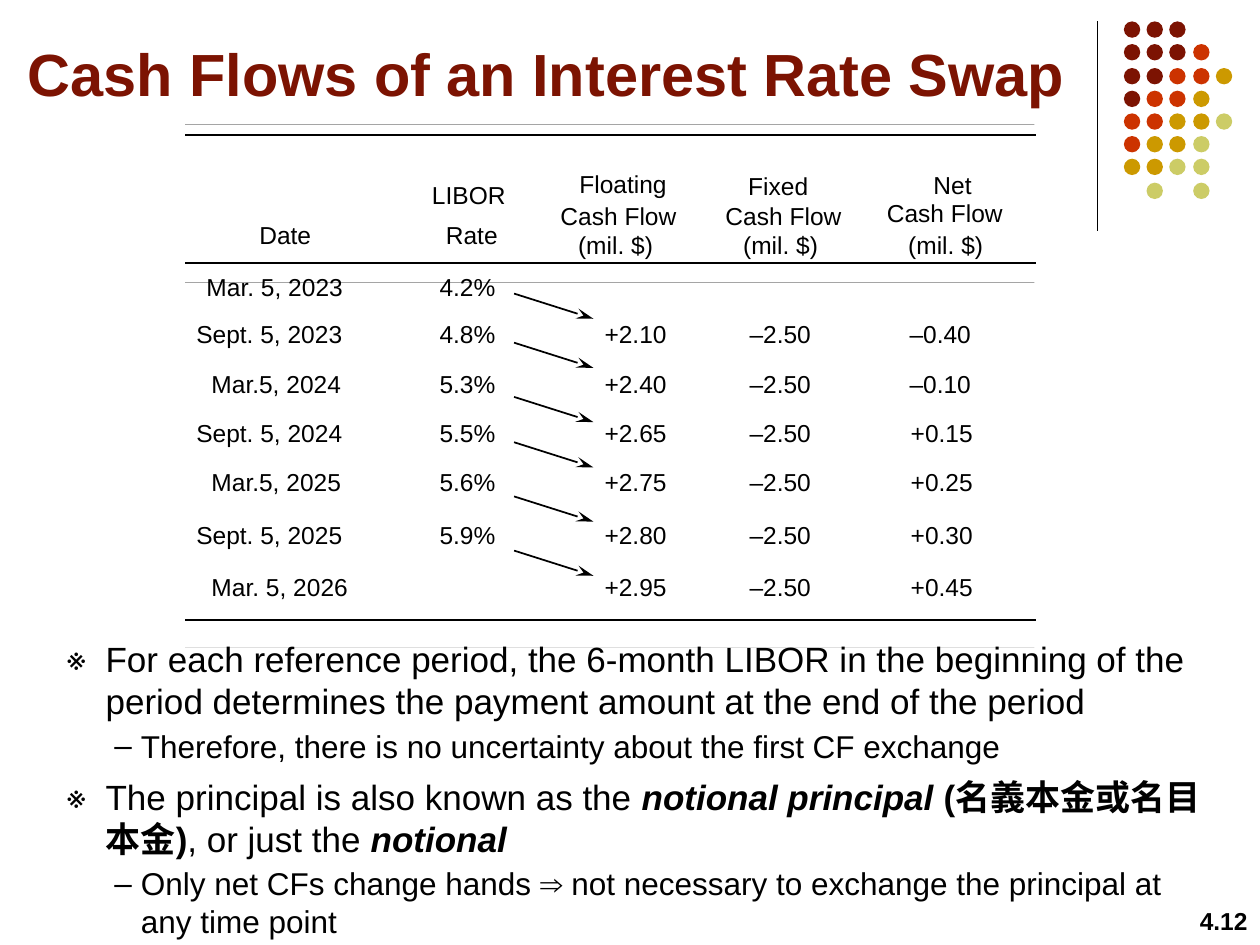
from dataclasses import dataclass

from lxml.etree import SubElement
from pptx import Presentation
from pptx.dml.color import RGBColor
from pptx.enum.shapes import MSO_CONNECTOR, MSO_SHAPE
from pptx.enum.text import MSO_ANCHOR, MSO_AUTO_SIZE, PP_ALIGN
from pptx.oxml.ns import qn
from pptx.util import Emu, Pt

SCALE = 9144  # EMU per px, at 100 px to the inch
HAIR = 600  # thickness of the hairline bars, in EMU
FONT = "Arial"
COLORS = {
    "ink": "000000",
    "D": "7C1302",
    "R": "CC3300",
    "G": "CC9900",
    "Y": "CCCC66",
}


@dataclass
class Label:
    text: str
    x: int
    y: int
    wide: int


@dataclass
class Row:
    date: Label
    rate: str = ""
    float_cf: str = ""
    net: str = ""


@dataclass
class Run:
    text: str
    bold: bool = False
    slant: bool = False


@dataclass
class Point:
    level: int
    before: int
    runs: list[Run]


@dataclass
class Style:
    size: int
    margin: int
    hang: int
    mark: str


HEADS = [
    Label("LIBOR", 333, 138, 79),
    Label("Rate", 344, 170, 62),
    Label("Date", 196, 170, 62),
    Label("Floating", 450, 129, 95),
    Label("Fixed", 584, 131, 74),
    Label("Net", 731, 130, 51),
    Label("Cash Flow", 435, 155, 113),
    Label("Cash Flow", 566, 155, 113),
    Label("Cash Flow", 694, 152, 113),
] + [Label("(mil. $)", x, 178, 80) for x in (449, 580, 711)]

ROWS = [
    Row(Label("Mar. 5, 2023", 154, 211, 129), "4.2%"),
    Row(Label("Sept. 5, 2023", 146, 248, 137), "4.8%", "+2.10", "–0.40"),
    Row(Label("Mar.5, 2024", 158, 288, 124), "5.3%", "+2.40", "–0.10"),
    Row(Label("Sept. 5, 2024", 146, 327, 137), "5.5%", "+2.65", "+0.15"),
    Row(Label("Mar.5, 2025", 158, 366, 124), "5.6%", "+2.75", "+0.25"),
    Row(Label("Sept. 5, 2025", 146, 408, 137), "5.9%", "+2.80", "+0.30"),
    Row(Label("Mar. 5, 2026", 158, 449, 129), "", "+2.95", "+0.45"),
]

STYLES = [Style(20, 31, 31, "※"), Style(18, 59, 21, "–")]
POINTS = [
    Point(0, 0, [Run("For each reference period, the 6-month LIBOR in the beginning of "
                     "the period determines the payment amount at the end of the period")]),
    Point(1, 3, [Run("Therefore, there is no uncertainty about the first CF exchange")]),
    Point(0, 6, [
        Run("The principal is also known as the "),
        Run("notional principal ", True, True),
        Run("(名義本金或名目本金)", True),
        Run(", or just the "),
        Run("notional", True, True),
    ]),
    Point(1, 3, [Run("Only net CFs change hands ⇒ not necessary to exchange the "
                     "principal at any time point")]),
]

DOTS = ["DDD", "DDDR", "DDRRG", "DRRG", "RRGGY", "RGGY", "GGYY", " Y Y"]


def px(n: int) -> Emu:
    return Emu(n * SCALE)


def tint(name: str) -> RGBColor:
    return RGBColor.from_string(COLORS[name])


def add_run(para, run: Run, size: int, color: str = "ink") -> None:
    part = para.add_run()
    part.text = run.text
    font = part.font
    font.name, font.size = FONT, Pt(size)
    font.bold, font.italic = run.bold, run.slant
    font.color.rgb = tint(color)


def add_box(slide, x: int, y: int, w: int, h: int, wrap: bool = True):
    frame = slide.shapes.add_textbox(px(x), px(y), px(w), px(h)).text_frame
    frame.word_wrap = wrap
    return frame


def add_label(slide, label: Label) -> None:
    frame = add_box(slide, label.x, label.y, label.wide, 34, False)
    frame.auto_size = MSO_AUTO_SIZE.SHAPE_TO_FIT_TEXT
    add_run(frame.paragraphs[0], Run(label.text), 14)


def add_line(slide, x: int, y: int, x2: int, y2: int,
             width: float = 1, arrow: bool = False) -> None:
    line = slide.shapes.add_connector(
        MSO_CONNECTOR.STRAIGHT, px(x), px(y), px(x2), px(y2))
    line.line.color.rgb = tint("ink")
    line.line.width = Pt(width)
    props = line.element.spPr
    if arrow:
        SubElement(props.find(qn("a:ln")), qn("a:tailEnd"),
                   type="stealth", w="med", len="lg")
    SubElement(props, qn("a:effectLst"))


def add_fill(slide, kind, x: int, y: int, w: Emu, h: Emu, color: str) -> None:
    shape = slide.shapes.add_shape(kind, px(x), px(y), w, h)
    shape.shadow.inherit = False
    shape.fill.solid()
    shape.fill.fore_color.rgb = tint(color)
    shape.line.fill.background()


def add_point(para, point: Point) -> None:
    style = STYLES[point.level]
    para.level = point.level
    para.space_before = Pt(point.before)
    props = para._p.get_or_add_pPr()
    props.set("marL", str(px(style.margin)))
    props.set("indent", str(-px(style.hang)))
    hue = SubElement(props, qn("a:buClr"))
    SubElement(hue, qn("a:srgbClr"), val=COLORS["ink"])
    SubElement(props, qn("a:buFont"), typeface=FONT)
    SubElement(props, qn("a:buChar"), char=style.mark)
    for run in point.runs:
        add_run(para, run, style.size)


def main() -> None:
    deck = Presentation()
    deck.slide_width, deck.slide_height = px(1000), px(750)
    slide = deck.slides.add_slide(deck.slide_layouts[5])

    # Corner rule and dots
    add_line(slide, 871, 17, 871, 183, 0.75)
    for r, codes in enumerate(DOTS):
        for c, code in enumerate(codes):
            if code != " ":
                add_fill(slide, MSO_SHAPE.OVAL, round(892 + 18.25 * c),
                         round(17 + 18.25 * r), px(13), px(13), code)

    # Page number
    para = add_box(slide, 933, 714, 67, 36).paragraphs[0]
    para.alignment = PP_ALIGN.RIGHT
    add_run(para, Run("4.12", True), 14)

    # Arrows from each rate to the next payment
    for y in (233, 272, 315, 351, 394, 437):
        add_line(slide, 408, y, 471, y + 20, arrow=True)

    # Rules and hairlines of the cash flow grid
    for y, thin in ((107, 99), (209, 224), (492, 514)):
        add_line(slide, 147, y, 822, y)
        add_fill(slide, MSO_SHAPE.RECTANGLE, 147, thin, px(674), Emu(HAIR), "ink")

    # Headings and rows
    for head in HEADS:
        add_label(slide, head)
    for row in ROWS:
        y = row.date.y
        add_label(slide, row.date)
        if row.rate:
            add_label(slide, Label(row.rate, 339, y, 65))
        if row.net:
            add_label(slide, Label(row.float_cf, 470, y, 70))
            add_label(slide, Label("–2.50", 585, y, 69))
            plus = row.net.startswith("+")
            add_label(slide, Label(row.net, 712 + plus, y, 69 + plus))

    # Title
    title = slide.shapes.title
    title.left, title.top, title.width, title.height = map(px, (12, 13, 858, 89))
    title.text_frame.vertical_anchor = MSO_ANCHOR.MIDDLE
    para = title.text_frame.paragraphs[0]
    para.alignment = PP_ALIGN.LEFT
    add_run(para, Run("Cash Flows of an Interest Rate Swap", True), 34, "D")

    # Bulleted notes
    frame = add_box(slide, 43, 501, 921, 259)
    frame.auto_size = MSO_AUTO_SIZE.SHAPE_TO_FIT_TEXT
    for i, point in enumerate(POINTS):
        add_point(frame.add_paragraph() if i else frame.paragraphs[0], point)

    deck.save("out.pptx")


if __name__ == "__main__":
    main()
